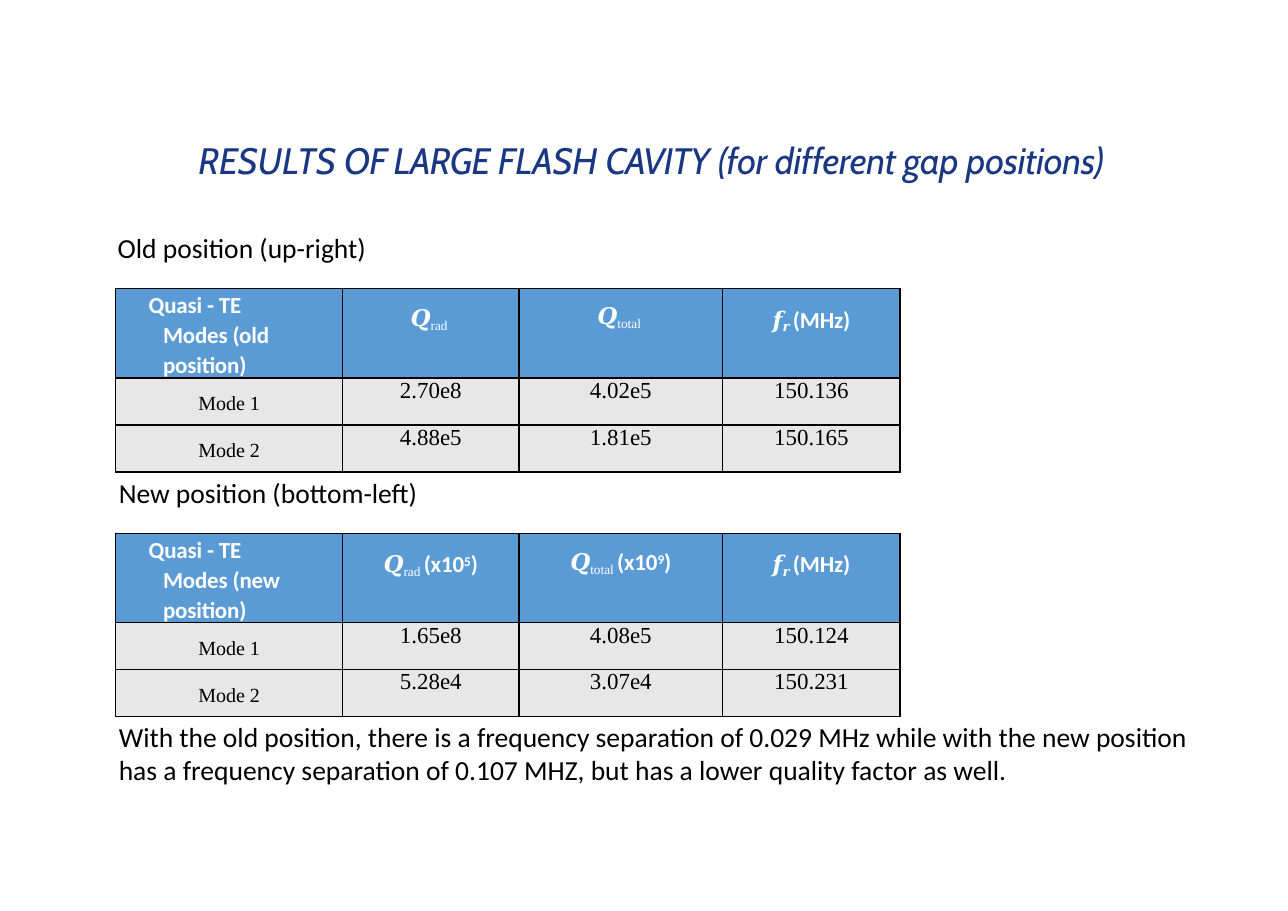
"""Build the slide comparing large flash cavity results for two gap positions."""
from pptx import Presentation
from pptx.dml.color import RGBColor
from pptx.enum.text import MSO_ANCHOR, PP_ALIGN
from pptx.oxml import parse_xml
from pptx.oxml.ns import nsdecls
from pptx.util import Inches, Pt

THEME = {
    "title": "193782", "text": "000000", "header": "5B9BD5",
    "header_text": "FFFFFF", "row": "E7E7E7", "border": "000000",
    "title_font": "Cabin", "body_font": "Calibri", "data_font": "Times New Roman",
    "title_size": 24, "body_size": 18, "cell_size": 15, "mode_size": 22.5,
}


def write(p, text, size, font, color, bold=False, italic=False, base=0, spc=0):
    r = p.add_run()
    r.text = text
    r.font.size = Pt(size)
    r.font.name = font
    r.font.bold = bold
    r.font.italic = italic
    r.font.color.rgb = RGBColor.from_string(color)
    rPr = r._r.get_or_add_rPr()
    if base:
        rPr.set("baseline", str(base * 1000))
    if spc:
        rPr.set("spc", str(round(spc * 100)))


def style_cell(cell, fill, top=0, right=0):
    cell.margin_left = cell.margin_bottom = 0
    cell.margin_top, cell.margin_right = Inches(top), Inches(right)
    tcPr = cell._tc.get_or_add_tcPr()
    for side in "LRTB":
        tcPr.append(parse_xml(
            f'<a:ln{side} {nsdecls("a")} w="12700"><a:solidFill>'
            f'<a:srgbClr val="{THEME["border"]}"/></a:solidFill></a:ln{side}>'))
    cell.fill.solid()
    cell.fill.fore_color.rgb = RGBColor.from_string(fill)
    p = cell.text_frame.paragraphs[0]
    p.alignment = PP_ALIGN.CENTER
    return p


prs = Presentation()
prs.slide_width, prs.slide_height = Inches(11.69), Inches(8.27)
s = prs.slides.add_slide(prs.slide_layouts[5])

title = s.shapes.title
title.left, title.top = Inches(0.18), Inches(1.16)
title.width, title.height = Inches(10.88), Inches(0.5)
tf = title.text_frame
tf.margin_left = tf.margin_right = tf.margin_bottom = 0
tf.margin_top = Inches(0.09)
tf.vertical_anchor = MSO_ANCHOR.TOP
p = tf.paragraphs[0]
p.alignment = PP_ALIGN.LEFT
p._p.get_or_add_pPr().set("marL", str(Inches(1.62)))
for text, spc in [("RESULTS ", 0), ("OF LARGE ", -0.6), ("FLASH ", -0.2),
                  ("CAVITY", -0.8), (" (for different gap positions)", -0.2)]:
    write(p, text, THEME["title_size"], THEME["title_font"], THEME["title"],
          italic=True, spc=spc)

captions = [
    (0.97, 2.05, 2.71, 0.4, "Old position (up-right)"),
    (0.98, 4.27, 3.63, 0.4, "New position (bottom-left)"),
    (0.98, 6.49, 10.02, 0.71,
     "With the old position, there is a frequency separation of 0.029 MHz while "
     "with the new position has a frequency separation of 0.107 MHZ, but has a "
     "lower quality factor as well."),
]
for left, top, width, height, text in captions:
    tb = s.shapes.add_textbox(Inches(left), Inches(top), Inches(width), Inches(height))
    tb.text_frame.word_wrap = True
    write(tb.text_frame.paragraphs[0], text, THEME["body_size"],
          THEME["body_font"], THEME["text"])

col_widths = [2.06, 1.6, 1.85, 1.61]
row_heights = [0.8, 0.42, 0.42]
tables = [
    (2.62, "old", ["", ""], [["2.70e8", "4.02e5", "150.136"],
                             ["4.88e5", "1.81e5", "150.165"]]),
    (4.84, "new", ["5", "9"], [["1.65e8", "4.08e5", "150.124"],
                               ["5.28e4", "3.07e4", "150.231"]]),
]
for top, position, powers, data in tables:
    tbl = s.shapes.add_table(3, 4, Inches(1.05), Inches(top), Inches(sum(col_widths)),
                             Inches(sum(row_heights))).table
    for col, width in zip(tbl.columns, col_widths):
        col.width = Inches(width)
    for row, height in zip(tbl.rows, row_heights):
        row.height = Inches(height)

    p = style_cell(tbl.cell(0, 0), THEME["header"], top=0.01, right=0.5)
    p.alignment = PP_ALIGN.LEFT
    p.line_spacing = 1.07
    pPr = p._p.get_or_add_pPr()
    pPr.set("marL", str(Inches(0.43)))
    pPr.set("indent", str(Inches(-0.13)))
    write(p, f"Quasi - TE Modes ({position} position)", THEME["cell_size"],
          THEME["body_font"], THEME["header_text"], bold=True, spc=-0.1)

    units = [[("(x10", 0), (n, 28), (")", 0)] if n else [] for n in powers]
    headers = [("𝑸", "rad ", units[0], 0.16), ("𝑸", "total ", units[1], 0.14),
               ("𝒇", "𝒓 ", [("(MHz)", 0)], 0.16)]
    for c, (symbol, sub, unit, inset) in enumerate(headers, 1):
        p = style_cell(tbl.cell(0, c), THEME["header"], top=inset)
        for text, base in [(symbol, 0), (sub, -17)]:
            write(p, text, THEME["cell_size"], THEME["data_font"],
                  THEME["header_text"], base=base)
        for text, base in unit:
            write(p, text, THEME["cell_size"], THEME["body_font"],
                  THEME["header_text"], bold=True, base=base, spc=-0.1)

    for i, values in enumerate(data, 1):
        p = style_cell(tbl.cell(i, 0), THEME["row"], top=0.05)
        write(p, f"Mode {i}", THEME["mode_size"], THEME["data_font"],
              THEME["text"], base=11)
        for c, value in enumerate(values, 1):
            p = style_cell(tbl.cell(i, c), THEME["row"])
            write(p, value, THEME["cell_size"], THEME["data_font"], THEME["text"])

prs.save("out.pptx")
